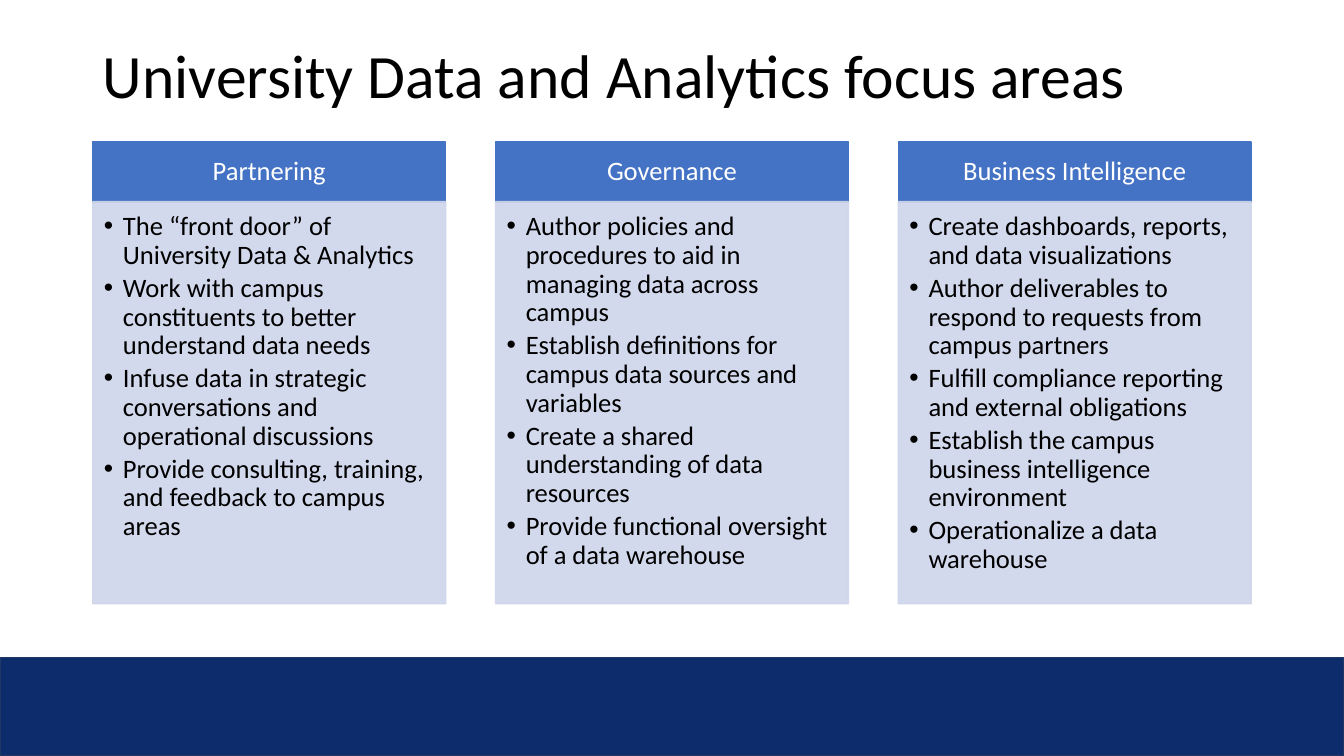
from lxml.etree import SubElement
from pptx import Presentation
from pptx.dml.color import RGBColor
from pptx.enum.shapes import MSO_SHAPE
from pptx.enum.text import MSO_ANCHOR, MSO_AUTO_SIZE, PP_ALIGN
from pptx.oxml.ns import qn
from pptx.util import Inches, Pt

FONT = "Calibri"
COLUMN_LEFT, COLUMN_WIDTH, COLUMN_STEP = 0.92, 3.5, 3.995
HEADER_TOP, HEADER_HEIGHT = 1.41, 0.6
PANEL_TOP, PANEL_HEIGHT = 2, 3.99
BULLET_INDENT = 0.19

FOCUS_AREAS = {
    "Partnering": [
        "The “front door” of University Data & Analytics",
        "Work with campus constituents to better understand data needs",
        "Infuse data in strategic conversations and operational discussions",
        "Provide consulting, training, and feedback to campus areas",
    ],
    "Governance": [
        "Author policies and procedures to aid in managing data across campus",
        "Establish definitions for campus data sources and variables",
        "Create a shared understanding of data resources",
        "Provide functional oversight of a data warehouse",
    ],
    "Business Intelligence": [
        "Create dashboards, reports, and data visualizations",
        "Author deliverables to respond to requests from campus partners",
        "Fulfill compliance reporting and external obligations",
        "Establish the campus business intelligence environment",
        "Operationalize a data warehouse",
    ],
}


def color(hex_value):
    return RGBColor.from_string(hex_value)


def apply(target, values):
    for name, value in values.items():
        setattr(target, name, value)


def format_frame(frame, anchor, margins):
    sides = ("margin_left", "margin_top", "margin_right", "margin_bottom")
    apply(frame, {"word_wrap": True, "auto_size": MSO_AUTO_SIZE.NONE,
                  "vertical_anchor": anchor})
    apply(frame, dict(zip(sides, map(Inches, margins))))


def write(paragraph, text, size, ink, **layout):
    paragraph.text = text
    apply(paragraph, {"line_spacing": 0.9, "space_before": Pt(0), **layout})
    apply(paragraph.font, {"name": FONT, "size": Pt(size)})
    paragraph.font.color.rgb = color(ink)


def add_block(slide, box, fill, line, opacity=None):
    block = slide.shapes.add_shape(MSO_SHAPE.RECTANGLE, *map(Inches, box))
    block.shadow.inherit = False
    block.fill.solid()
    block.fill.fore_color.rgb = color(fill)
    block.line.color.rgb = color(line)
    block.line.width = Pt(1)
    if opacity is not None:
        for shade in block.element.spPr.iter(qn("a:srgbClr")):
            SubElement(shade, qn("a:alpha"), val=str(opacity * 1000))
    return block


def add_bullet(paragraph):
    properties = paragraph._p.get_or_add_pPr()
    indent = Inches(BULLET_INDENT)
    properties.set("marL", str(indent))
    properties.set("indent", str(-indent))
    SubElement(properties, qn("a:buFont"), typeface="Arial")
    SubElement(properties, qn("a:buChar"), char="•")


def add_title(slide, text):
    title = slide.shapes.title
    box = map(Inches, (0.92, 0.4, 11.5, 1.45))
    apply(title, dict(zip(("left", "top", "width", "height"), box)))
    format_frame(title.text_frame, MSO_ANCHOR.TOP, (0.1, 0.05, 0.1, 0.05))
    write(title.text_frame.paragraphs[0], text, 44, "000000",
          alignment=PP_ALIGN.LEFT)


def add_header(slide, left, text):
    header = add_block(slide, (left, HEADER_TOP, COLUMN_WIDTH, HEADER_HEIGHT),
                       "4472C4", "4472C4")
    format_frame(header.text_frame, MSO_ANCHOR.MIDDLE, (0.15, 0.08, 0.15, 0.08))
    write(header.text_frame.paragraphs[0], text, 19, "FFFFFF",
          alignment=PP_ALIGN.CENTER)


def add_panel(slide, left, duties):
    panel = add_block(slide, (left, PANEL_TOP, COLUMN_WIDTH, PANEL_HEIGHT),
                      "CFD5EA", "CFD5EA", opacity=90)
    frame = panel.text_frame
    format_frame(frame, MSO_ANCHOR.TOP, (0.11, 0.11, 0.15, 0.17))
    for index, duty in enumerate(duties):
        paragraph = frame.add_paragraph() if index else frame.paragraphs[0]
        add_bullet(paragraph)
        write(paragraph, duty, 19, "000000", level=1,
              alignment=PP_ALIGN.LEFT, space_after=Pt(3))


def main():
    deck = Presentation()
    apply(deck, {"slide_width": Inches(13.33), "slide_height": Inches(7.5)})
    slide = deck.slides.add_slide(deck.slide_layouts.get_by_name("Title Only"))

    # Footer band and title
    add_block(slide, (0, 6.52, 13.33, 0.98), "0D2C6C", "203864")
    add_title(slide, "University Data and Analytics focus areas")

    # One column per focus area
    for index, (area, duties) in enumerate(FOCUS_AREAS.items()):
        left = COLUMN_LEFT + index * COLUMN_STEP
        add_header(slide, left, area)
        add_panel(slide, left, duties)

    deck.save("out.pptx")


if __name__ == "__main__":
    main()
